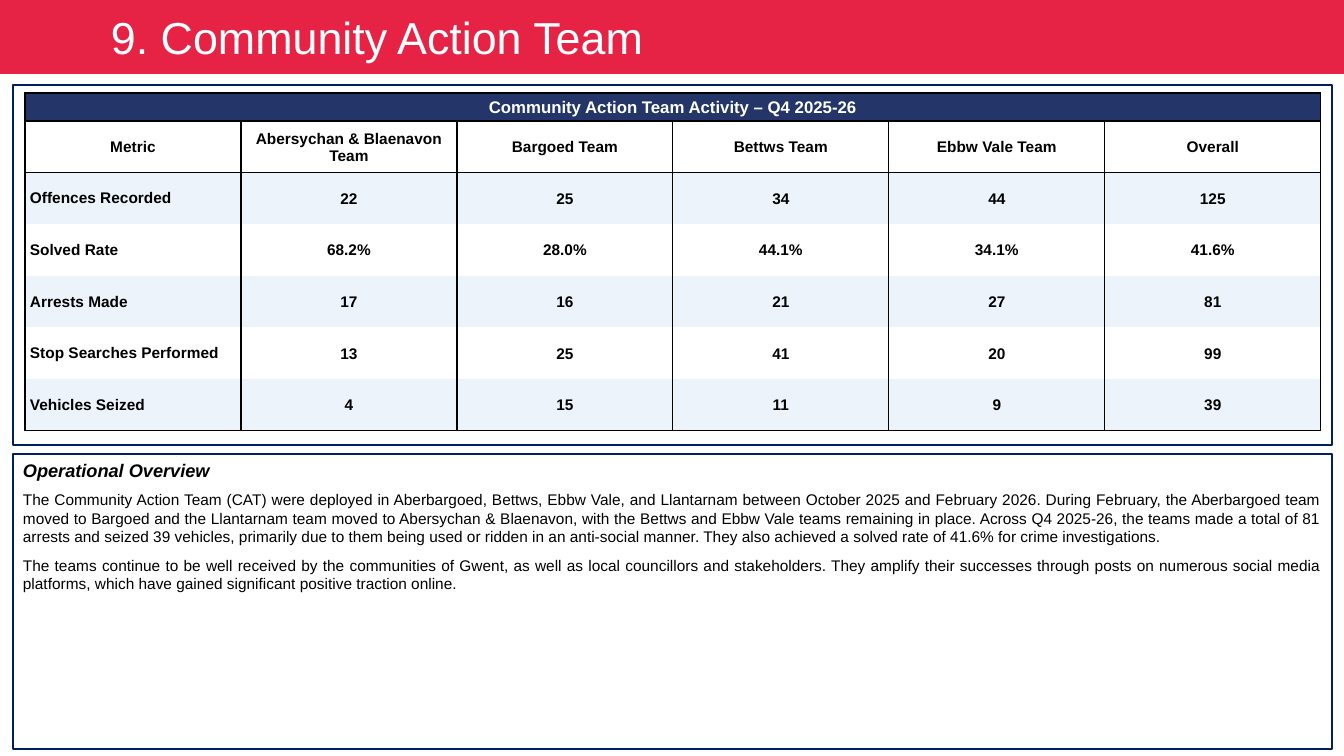
from dataclasses import dataclass

from lxml.etree import SubElement
from pptx import Presentation
from pptx.dml.color import RGBColor
from pptx.enum.shapes import MSO_SHAPE as Preset
from pptx.enum.text import MSO_ANCHOR as Anchor, PP_ALIGN as Align
from pptx.oxml.ns import qn
from pptx.util import Emu, Pt

EMU_PER_PX = 914400 / 100.8
BLACK, WHITE = "000000", "FFFFFF"
NAVY, CRIMSON = "002060", "E62344"
HEADING_BLUE, STRIPE_BLUE = "243569", "ECF3FA"


@dataclass(frozen=True)
class Panel:
    left: int
    top: int
    width: int
    height: int
    fill: str | None = None
    line: str | None = None


@dataclass(frozen=True)
class Passage:
    text: str
    size: int
    emphasis: bool = False
    space_before: int = 0


ACTIVITY_FRAME = Panel(13, 85, 1319, 360, line=NAVY)
TITLE_BAND = Panel(0, 0, 1344, 74, fill=CRIMSON)
OVERVIEW_FRAME = Panel(13, 454, 1319, 295, line=NAVY)

ACTIVITY_TITLE = "Community Action Team Activity – Q4 2025-26"
ACTIVITY = [
    ["Metric", "Abersychan & Blaenavon Team", "Bargoed Team", "Bettws Team", "Ebbw Vale Team", "Overall"],
    ["Offences Recorded", "22", "25", "34", "44", "125"],
    ["Solved Rate", "68.2%", "28.0%", "44.1%", "34.1%", "41.6%"],
    ["Arrests Made", "17", "16", "21", "27", "81"],
    ["Stop Searches Performed", "13", "25", "41", "20", "99"],
    ["Vehicles Seized", "4", "15", "11", "9", "39"],
]
OVERVIEW = [
    Passage("Operational Overview", 13, emphasis=True),
    Passage(
        "The Community Action Team (CAT) were deployed in Aberbargoed, Bettws, Ebbw Vale, and Llantarnam "
        "between October 2025 and February 2026. During February, the Aberbargoed team moved to Bargoed and "
        "the Llantarnam team moved to Abersychan & Blaenavon, with the Bettws and Ebbw Vale teams remaining "
        "in place. Across Q4 2025-26, the teams made a total of 81 arrests and seized 39 vehicles, primarily "
        "due to them being used or ridden in an anti-social manner. They also achieved a solved rate of 41.6% "
        "for crime investigations.",
        11,
        space_before=7,
    ),
    Passage(
        "The teams continue to be well received by the communities of Gwent, as well as local councillors and "
        "stakeholders. They amplify their successes through posts on numerous social media platforms, which "
        "have gained significant positive traction online.",
        11,
        space_before=7,
    ),
]


def px(length: float) -> Emu:
    return Emu(round(length * EMU_PER_PX))


def color(value: str) -> RGBColor:
    return RGBColor.from_string(value)


def paint(fill, value: str | None) -> None:
    if value is None:
        fill.background()
    else:
        fill.solid()
        fill.fore_color.rgb = color(value)


def style(paragraph, size: int, value: str, bold: bool = False, italic: bool = False) -> None:
    for run in paragraph.runs:
        run.font.name = "Arial"
        run.font.size = Pt(size)
        run.font.bold = bold
        run.font.italic = italic
        run.font.color.rgb = color(value)


def draw_panel(slide, panel: Panel):
    shape = slide.shapes.add_shape(
        Preset.RECTANGLE, px(panel.left), px(panel.top), px(panel.width), px(panel.height)
    )
    shape.shadow.inherit = False
    paint(shape.fill, panel.fill)
    paint(shape.line.fill, panel.line)
    if panel.line:
        shape.line.width = Pt(1.25)
    return shape


def draw_title(slide) -> None:
    frame = draw_panel(slide, TITLE_BAND).text_frame
    frame.text = "9. Community Action Team"
    frame.margin_left = px(111)
    frame.vertical_anchor = Anchor.MIDDLE
    frame.paragraphs[0].alignment = Align.LEFT
    style(frame.paragraphs[0], 32, WHITE)


def draw_overview(slide) -> None:
    frame = draw_panel(slide, OVERVIEW_FRAME).text_frame
    frame.text = "\n".join(passage.text for passage in OVERVIEW)
    frame.word_wrap = True
    frame.vertical_anchor = Anchor.TOP
    for paragraph, passage in zip(frame.paragraphs, OVERVIEW):
        paragraph.alignment = Align.JUSTIFY
        if passage.space_before:
            paragraph.space_before = Pt(passage.space_before)
        style(paragraph, passage.size, BLACK, passage.emphasis, passage.emphasis)


def set_borders(cell, visible: str) -> None:
    properties = cell._tc.get_or_add_tcPr()
    for side in "LRTB":
        edge = SubElement(properties, qn(f"a:ln{side}"), w=str(Pt(1)))
        if side in visible:
            solid = SubElement(edge, qn("a:solidFill"))
            SubElement(solid, qn("a:srgbClr"), val=BLACK)
        else:
            SubElement(edge, qn("a:noFill"))


def draw_activity(slide) -> None:
    rows = [[ACTIVITY_TITLE] + [""] * 5] + ACTIVITY
    last = len(rows) - 1
    table = slide.shapes.add_table(len(rows), 6, px(25), px(93), px(1296), px(338)).table
    table.first_row = table.horz_banding = False
    for column in table.columns:
        column.width = px(216)
    for index, row in enumerate(table.rows):
        row.height = px(28 if index == 0 else 310 / last)

    for r, texts in enumerate(rows):
        fill = HEADING_BLUE if r == 0 else STRIPE_BLUE if r % 2 == 0 else None
        borders = "LR" + ("T" if r <= 2 else "") + ("B" if r <= 1 or r == last else "")
        for c, text in enumerate(texts):
            cell = table.cell(r, c)
            is_metric = r > 1 and c == 0
            set_borders(cell, borders)
            paint(cell.fill, fill)
            cell.vertical_anchor = Anchor.MIDDLE
            cell.margin_left = cell.margin_right = cell.margin_top = px(5 if is_metric else 1)
            cell.margin_bottom = px(5 if is_metric else 0)
            cell.text_frame.text = text
            paragraph = cell.text_frame.paragraphs[0]
            paragraph.alignment = Align.LEFT if is_metric else Align.CENTER
            style(paragraph, 12 if r == 0 else 11, WHITE if r == 0 else BLACK, bold=True)
    table.cell(0, 0).merge(table.cell(0, 5))


def main() -> None:
    presentation = Presentation()
    presentation.slide_width, presentation.slide_height = px(1344), px(756)
    slide = presentation.slides.add_slide(presentation.slide_layouts[6])
    draw_panel(slide, ACTIVITY_FRAME)
    draw_title(slide)
    draw_overview(slide)
    draw_activity(slide)
    presentation.save("out.pptx")


if __name__ == "__main__":
    main()
